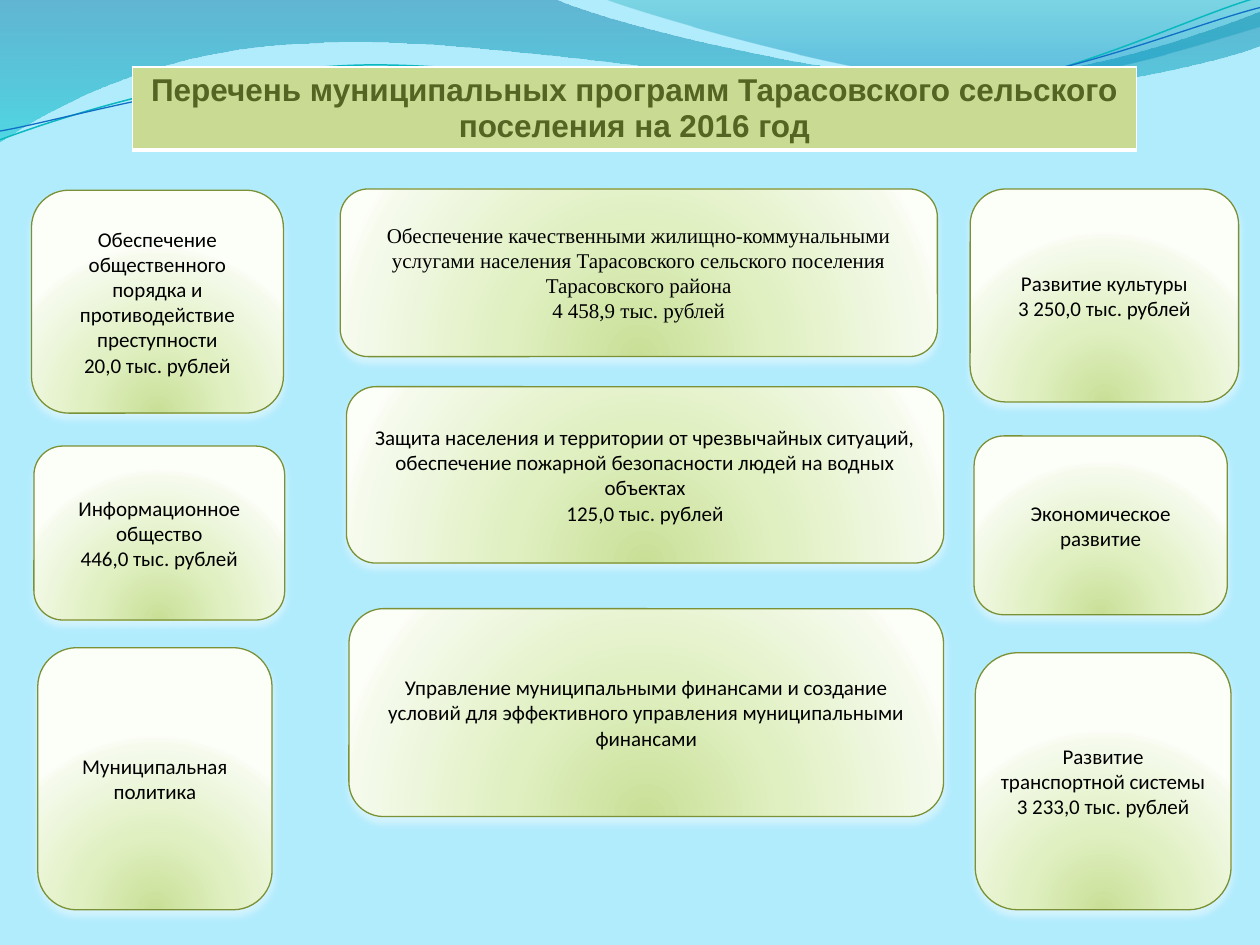
import math
from dataclasses import dataclass

from lxml import etree
from pptx import Presentation
from pptx.dml.color import RGBColor
from pptx.enum import shapes, text
from pptx.oxml import ns
from pptx.util import Pt


@dataclass(frozen=True)
class Theme:
    background: str = "B1ECFD"
    title_fill: str = "C9DA92"
    title_ink: str = "546422"
    title_border: str = "FFFFFF"
    box_line: str = "7B9135"
    box_shadow: str = "FFFFFF"
    ink: str = "000000"
    title_font: str = "Arial"
    body_font: str = "Calibri"
    serif_font: str = "Times New Roman"
    title_size: int = 18
    body_size: int = 12
    # Gradient stops: position %, colour, opacity %
    box_stops: tuple = ((0, "C9DF97", 100), (43, "E0F0C1", 100),
                        (93, "F5FAEC", 100), (100, "FCFEF8", 100))
    back_wave: tuple = ((0, "0074A1", 45), (100, "00C6CF", 55))
    front_wave: tuple = ((0, "00A1A9", 30), (80, "008BBF", 45))
    teal_line: str = "0AB8BF"
    blue_line: str = "0F6FC6"


THEME = Theme()
CURVE_TILT = -2.7

# Frames are left, top, width, height. In an outline a pair is a straight
# segment and six numbers are a Bezier curve.
BACK_FRAME = (-0.7, -0.7, 721.4, 82.1)
BACK_WAVE = [
    (0, 0), (316.8, -0.7),
    (342.7, 12.2, 478.1, 45.4, 545.8, 45.4),
    (614.2, 45.4, 689.8, 18.7, 720, 6.5),
    (720.7, 25.9),
    (707.8, 31.7, 626.4, 54.7, 537.1, 54),
    (447.8, 53.3, 275, 20.2, 185, 24.5),
    (92.9, 25.9, 33.1, 59.8, -0.7, 81.4),
]
FRONT_FRAME = (344.9, -0.7, 375.1, 50.4)
FRONT_WAVE = [
    (344.9, -0.7),
    (366.5, 7.9, 491, 44.6, 553.7, 46.8),
    (616.3, 49.7, 691.9, 23, 720, 15.1),
    (720, 0),
]
TEAL_FRAME = (-1.4, 15.8, 721.4, 51.1)
TEAL_CURVE = [
    (0, 79.9),
    (34.6, 67, 113.8, 41, 199.4, 37.4),
    (284.4, 33.8, 427, 64.1, 513.4, 57.6),
    (599.8, 51.1, 675.4, 10.8, 718.6, -1.4),
]
BLUE_FRAME = (-1.4, 21.6, 722.2, 41.8)
BLUE_CURVE = [
    (0, 74.9),
    (33.8, 69.1, 118.1, 43.9, 203.8, 40.3),
    (290.2, 36.7, 430.6, 60.5, 516.2, 54),
    (601.9, 48.2, 677.5, 15.1, 720, 4.3),
]

TITLE = "Перечень муниципальных программ Тарасовского сельского поселения на 2016 год"

# Left, top, width, height, wording, font
PROGRAMS = [
    (18, 108.7, 144, 127.4, "Обеспечение общественного порядка и противодействие "
     "преступности\n20,0 тыс. рублей", THEME.body_font),
    (554.4, 108, 153.4, 121.7, "Развитие культуры\n3 250,0 тыс. рублей", THEME.body_font),
    (198, 221, 341.3, 100.8, "Защита населения и территории от чрезвычайных ситуаций, "
     "обеспечение пожарной безопасности людей на водных объектах\n125,0 тыс. рублей",
     THEME.body_font),
    (556.6, 249.1, 144.7, 102.2, "Экономическое развитие", THEME.body_font),
    (19.4, 254.9, 143.3, 99.4, "Информационное общество\n446,0 тыс. рублей", THEME.body_font),
    (557.3, 373, 146.2, 146.9, "Развитие транспортной системы\n3 233,0 тыс. рублей",
     THEME.body_font),
    (199.4, 347.8, 339.8, 118.8, "Управление муниципальными финансами и создание условий "
     "для эффективного управления муниципальными финансами", THEME.body_font),
    (21.6, 370.1, 133.9, 149.8, "Муниципальная политика", THEME.body_font),
    (194.4, 108, 341.3, 95.8, "Обеспечение качественными жилищно-коммунальными услугами "
     "населения Тарасовского сельского поселения Тарасовского района\n4 458,9 тыс. рублей",
     THEME.serif_font),
]


def rgb(colour):
    return RGBColor.from_string(colour)


def add_xml(parent, tag, **attributes):
    node = etree.SubElement(parent, ns.qn(tag))
    for name, value in attributes.items():
        node.set(name, str(value))
    return node


def add_colour(parent, colour, opacity=100):
    node = add_xml(parent, "a:srgbClr", val=colour)
    if opacity < 100:
        add_xml(node, "a:alpha", val=opacity * 1000)


def fill_gradient(shape, stops, radial=False):
    """Fill downwards, or outwards from below the shape when radial."""
    shape.fill.background()
    empty_fill = shape._element.spPr.find(ns.qn("a:noFill"))
    gradient = etree.Element(ns.qn("a:gradFill"), rotWithShape="1")
    stop_list = add_xml(gradient, "a:gsLst")
    for position, colour, opacity in stops:
        add_colour(add_xml(stop_list, "a:gs", pos=position * 1000), colour, opacity)
    if radial:
        centre = add_xml(gradient, "a:path", path="circle")
        add_xml(centre, "a:fillToRect", l=50000, t=130000, r=50000, b=-30000)
    else:
        add_xml(gradient, "a:lin", ang=90 * 60000, scaled=0)
    empty_fill.getparent().replace(empty_fill, gradient)


def to_local(point, frame, tilt):
    """Undo the tilt about the frame's centre and measure from its corner."""
    left, top, width, height = frame
    dx, dy = point[0] - left - width / 2, point[1] - top - height / 2
    cos, sin = math.cos(math.radians(-tilt)), math.sin(math.radians(-tilt))
    return Pt(dx * cos - dy * sin + width / 2), Pt(dx * sin + dy * cos + height / 2)


def add_outline(slide, frame, outline, close, tilt=0):
    """Add a freeform, then bend its segments into true curves."""
    builder = slide.shapes.build_freeform(*map(Pt, outline[0]))
    builder.add_line_segments([tuple(map(Pt, part[-2:])) for part in outline[1:]], close=close)
    shape = builder.convert_to_shape()
    shape.left, shape.top, shape.width, shape.height = map(Pt, frame)
    shape.rotation = tilt
    shape.shadow.inherit = False
    track = next(shape._element.iter(ns.qn("a:path")))
    for old in list(track):
        track.remove(old)
    track.set("w", str(Pt(frame[2])))
    track.set("h", str(Pt(frame[3])))
    for index, part in enumerate(outline):
        tag = "a:moveTo" if index == 0 else "a:lnTo" if len(part) == 2 else "a:cubicBezTo"
        segment = add_xml(track, tag)
        for start in range(0, len(part), 2):
            x, y = to_local(part[start:start + 2], frame, tilt)
            add_xml(segment, "a:pt", x=x, y=y)
    if close:
        add_xml(track, "a:close")
    return shape


def add_wave(slide, frame, outline, stops):
    wave = add_outline(slide, frame, outline, close=True)
    fill_gradient(wave, stops)
    wave.line.fill.background()


def add_curve(slide, frame, outline, colour, width):
    curve = add_outline(slide, frame, outline, close=False, tilt=CURVE_TILT)
    curve.fill.background()
    curve.line.color.rgb = rgb(colour)
    curve.line.width = Pt(width)


def write(frame, wording, font, size, colour, bold=False):
    frame.text = wording
    for paragraph in frame.paragraphs:
        paragraph.alignment = text.PP_ALIGN.CENTER
        for run in paragraph.runs:
            run.font.name, run.font.size, run.font.bold = font, Pt(size), bold
            run.font.color.rgb = rgb(colour)


def add_title_table(slide):
    holder = slide.shapes.add_table(1, 1, Pt(75.6), Pt(38.2), Pt(573.8), Pt(29.5))
    holder.height = Pt(50.4)
    table = holder.table
    table.first_row = table.horz_banding = False
    cell = table.cell(0, 0)
    write(cell.text_frame, TITLE, THEME.title_font, THEME.title_size, THEME.title_ink, True)
    properties = cell._tc.get_or_add_tcPr()
    for side, width in (("L", 1), ("R", 1), ("T", 1), ("B", 3)):
        border = add_xml(properties, f"a:ln{side}", w=Pt(width))
        add_colour(add_xml(border, "a:solidFill"), THEME.title_border)
    cell.fill.solid()
    cell.fill.fore_color.rgb = rgb(THEME.title_fill)


def add_program(slide, left, top, width, height, wording, font):
    box = slide.shapes.add_shape(shapes.MSO_SHAPE.ROUNDED_RECTANGLE,
                                 Pt(left), Pt(top), Pt(width), Pt(height))
    fill_gradient(box, THEME.box_stops, radial=True)
    box.line.color.rgb = rgb(THEME.box_line)
    box.line.width = Pt(0.75)
    box.shadow.inherit = False
    effects = box._element.spPr.find(ns.qn("a:effectLst"))
    shadow = add_xml(effects, "a:outerShdw", blurRad=Pt(4.5), dist=Pt(3),
                     dir=90 * 60000, rotWithShape=0)
    add_colour(shadow, THEME.box_shadow, 48)
    box.text_frame.word_wrap = True
    box.text_frame.vertical_anchor = text.MSO_ANCHOR.MIDDLE
    write(box.text_frame, wording, font, THEME.body_size, THEME.ink)


def main():
    deck = Presentation()
    deck.slide_width, deck.slide_height = Pt(720), Pt(540)
    slide = deck.slides.add_slide(deck.slide_layouts[6])
    slide.background.fill.solid()
    slide.background.fill.fore_color.rgb = rgb(THEME.background)
    add_wave(slide, BACK_FRAME, BACK_WAVE, THEME.back_wave)
    add_wave(slide, FRONT_FRAME, FRONT_WAVE, THEME.front_wave)
    add_curve(slide, TEAL_FRAME, TEAL_CURVE, THEME.teal_line, 0.85)
    add_curve(slide, BLUE_FRAME, BLUE_CURVE, THEME.blue_line, 0.75)
    add_title_table(slide)
    for program in PROGRAMS:
        add_program(slide, *program)
    deck.save("out.pptx")


if __name__ == "__main__":
    main()
